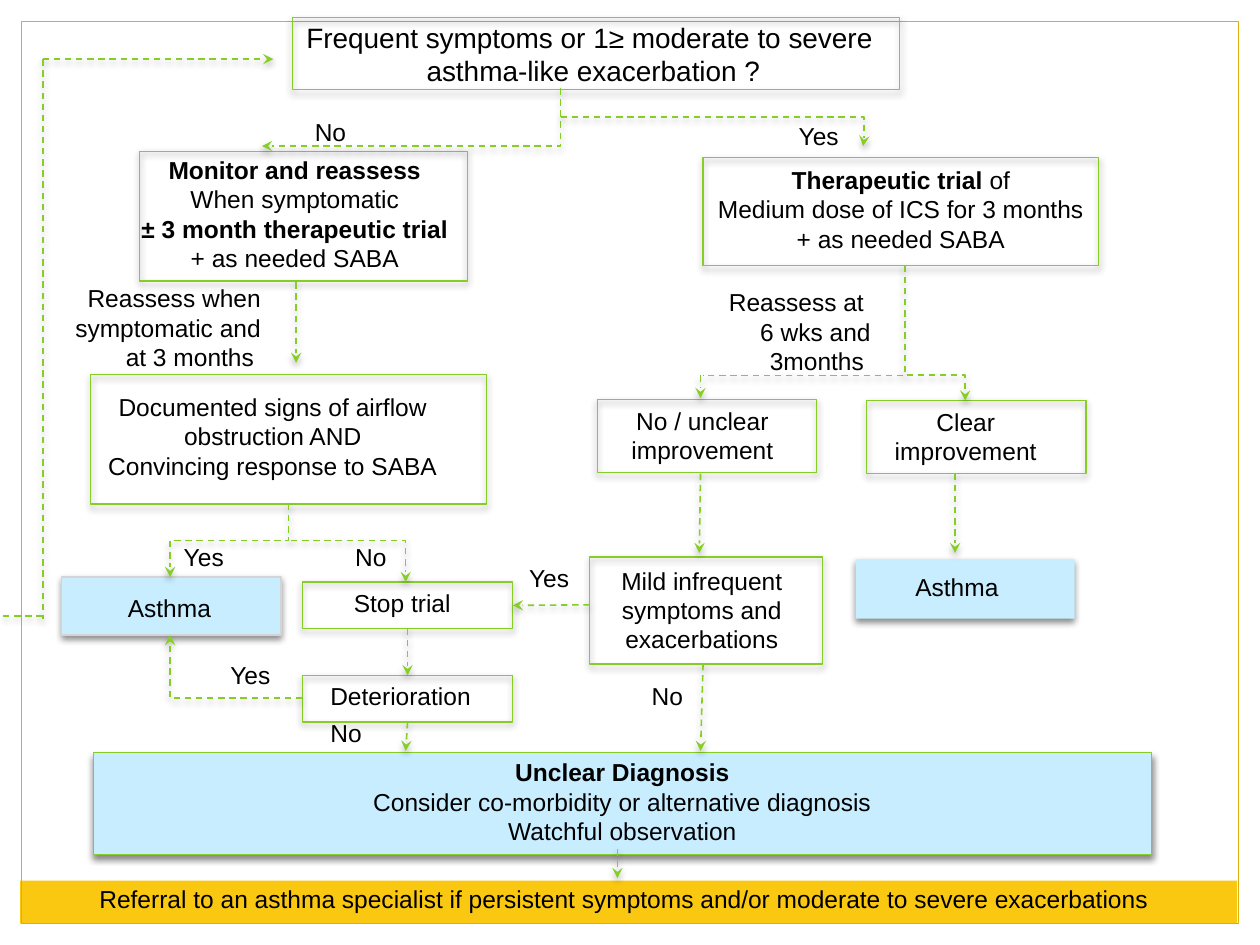
"""Build the asthma diagnosis flowchart slide."""
from lxml import etree
from pptx import Presentation
from pptx import util as u
from pptx.dml.color import RGBColor
from pptx.enum import dml, shapes, text
from pptx.oxml.ns import qn

THEME = {
    "font": "Arial", "ink": "000000", "body": 14, "title": 16,
    "green": "86CE24", "gold": "FAC810", "gold_line": "DBAF0E",
    "blue": "C7EDFF", "grey": "D4D4D4", "box_line": 0.75, "arrow_line": 0.9,
}
LEFT, CENTER, RIGHT = text.PP_ALIGN.LEFT, text.PP_ALIGN.CENTER, text.PP_ALIGN.RIGHT

QUESTION = ((2.08, 0.11, 5.26, 0.64), CENTER,
            ["Frequent symptoms or 1≥ moderate to severe ", "asthma-like exacerbation ?"])

BACKDROP = [
    ((0.16, 6.99, 9.66, 0.34), "gold", None),
    ((0.17, 0.17, 9.66, 7.16), None, "gold_line"),
]
OUTCOMES = [
    ((0.74, 5.97, 8.4, 0.81), "blue", "green"),
    ((6.79, 4.44, 1.74, 0.47), "blue", None),
    ((0.49, 4.58, 1.74, 0.46), "blue", "grey"),
]
STEPS = [
    (2.32, 0.14, 4.82, 0.57), (1.11, 1.2, 2.6, 1.03), (5.58, 1.25, 3.14, 0.86),
    (0.72, 2.97, 3.14, 1.03), (4.68, 4.42, 1.85, 0.85), (6.88, 3.18, 1.74, 0.58),
    (4.74, 3.17, 1.74, 0.58), (2.4, 4.62, 1.67, 0.37), (2.4, 5.36, 1.67, 0.37),
]

CAPTIONS = [
    ((0.62, 1.18, 3.44, 1.04), CENTER,
     ["**Monitor and reassess", "When symptomatic",
      "**± 3 month therapeutic trial", "+ as needed SABA"]),
    ((5.43, 1.26, 3.44, 0.81), CENTER,
     ["**Therapeutic trial **of", "Medium dose of ICS for 3 months", "+ as needed SABA"]),
    ((0.46, 2.2, 1.71, 0.81), RIGHT, ["Reassess when symptomatic and at 3 months "]),
    ((5.43, 2.23, 1.58, 0.81), RIGHT, ["Reassess at ", "6 wks and 3months "]),
    ((0.72, 3.06, 2.89, 0.81), CENTER,
     ["Documented signs of airflow obstruction AND", "Convincing response to SABA"]),
    ((4.74, 3.17, 1.67, 0.57), CENTER, ["No / unclear improvement"]),
    ((6.88, 3.18, 1.57, 0.57), CENTER, ["Clear improvement"]),
    ((4.53, 4.44, 2.08, 0.81), CENTER, ["Mild infrequent symptoms and exacerbations"]),
    ((6.74, 4.49, 1.71, 0.34), CENTER, ["Asthma"]),
    ((0.49, 4.66, 1.71, 0.34), CENTER, ["Asthma"]),
    ((2.71, 4.62, 1.36, 0.34), LEFT, ["Stop trial"]),
    ((2.5, 5.36, 1.36, 0.34), CENTER, ["Deterioration"]),
    ((0.74, 5.96, 8.4, 0.81), CENTER,
     ["**Unclear Diagnosis", "Consider co-morbidity or alternative diagnosis",
      "Watchful observation"]),
    ((0.69, 6.97, 8.8, 0.34), LEFT,
     ["Referral to an asthma specialist if persistent symptoms "
      "and/or moderate to severe exacerbations"]),
]
ANSWERS = [
    ("No", 2.4, 0.88, LEFT), ("Yes", 6.24, 0.91, LEFT), ("Yes", 1.36, 4.25, LEFT),
    ("No", 2.72, 4.25, LEFT), ("Yes", 4.1, 4.42, LEFT), ("No", 4.9, 5.36, RIGHT),
    ("No", 2.35, 5.65, RIGHT), ("Yes", 1.73, 5.19, LEFT),
]

STRAIGHT_ARROWS = [
    ((2.35, 2.24), (2.35, 2.88)), ((5.56, 3.76), (5.55, 4.39)),
    ((5.56, 2.98), (5.56, 3.16)), ((7.58, 3.76), (7.58, 4.39)),
    ((4.68, 4.8), (4.07, 4.8)), ((3.24, 4.99), (3.24, 5.36)),
    ((5.58, 5.27), (5.56, 5.96)), ((3.24, 5.73), (3.22, 5.96)),
    ((4.9, 6.74), (4.9, 6.97)), ((0.34, 0.47), (2.17, 0.47)),
]
PLAIN_LINES = [
    ((7.17, 2.98), (5.58, 2.98)), ((0.34, 0.47), (0.34, 4.91)), ((0.34, 4.89), (0, 4.89)),
]
SIDE_ELBOWS = [((4.45, 0.7), (2.08, 1.16), 0), ((4.45, 0.93), (6.85, 1.16), 100400)]
DOWN_ELBOWS = [((7.18, 2.11), (7.66, 3.18), 81100), ((2.29, 4), (1.35, 4.58), 50000)]
CORNERS = [((2.31, 4.29), (3.22, 4.62)), ((2.4, 5.54), (1.35, 5.04))]


def color(name):
    return RGBColor.from_string(THEME[name])


def cast_shadow(part, opacity):
    effects = part._element.spPr.find(qn("a:effectLst"))
    if effects is None:
        effects = etree.SubElement(part._element.spPr, qn("a:effectLst"))
    shadow = etree.SubElement(effects, qn("a:outerShdw"), blurRad=str(u.Pt(4)),
                              dist=str(u.Pt(2)), dir="5400000", rotWithShape="0")
    black = etree.SubElement(shadow, qn("a:srgbClr"), val="000000")
    etree.SubElement(black, qn("a:alpha"), val=str(opacity * 1000))


def add_box(slide, place, fill=None, line=None, shadow=True):
    box = slide.shapes.add_shape(shapes.MSO_SHAPE.RECTANGLE, *map(u.Inches, place))
    box.shadow.inherit = False
    if fill:
        box.fill.solid()
        box.fill.fore_color.rgb = color(fill)
    else:
        box.fill.background()
    if line:
        box.line.color.rgb = color(line)
        box.line.width = u.Pt(THEME["box_line"])
    else:
        box.line.fill.background()
    if shadow:
        cast_shadow(box, 45)
    return box


def write(frame, lines, align, size):
    """Fill a text frame; each ** in a line toggles bold."""
    frame.word_wrap = True
    frame.auto_size = text.MSO_AUTO_SIZE.NONE
    frame.vertical_anchor = text.MSO_ANCHOR.TOP
    for i, line in enumerate(lines):
        paragraph = frame.paragraphs[0] if i == 0 else frame.add_paragraph()
        paragraph.alignment = align
        font = paragraph.font
        font.name, font.size = THEME["font"], u.Pt(THEME[size])
        font.color.rgb = color("ink")
        pieces = [(piece, n % 2 == 1) for n, piece in enumerate(line.split("**")) if piece]
        uniform = len(pieces) == 1
        if uniform:
            font.bold = pieces[0][1]
        for piece, bold in pieces:
            run = paragraph.add_run()
            run.text = piece
            if not uniform:
                run.font.bold = bold


def add_caption(slide, place, align, lines):
    caption = slide.shapes.add_textbox(*map(u.Inches, place))
    write(caption.text_frame, lines, align, "body")


def add_link(slide, start, end, kind=shapes.MSO_CONNECTOR.STRAIGHT, arrow=True):
    link = slide.shapes.add_connector(kind, *map(u.Inches, (*start, *end)))
    link.line.color.rgb = color("green")
    link.line.width = u.Pt(THEME["arrow_line"])
    link.line.dash_style = dml.MSO_LINE.DASH
    if arrow:
        etree.SubElement(link.line._get_or_add_ln(), qn("a:tailEnd"), type="stealth")
    cast_shadow(link, 35)
    return link


def add_elbow(slide, start, end, bend):
    elbow = add_link(slide, start, end, shapes.MSO_CONNECTOR.ELBOW)
    guides = elbow._element.spPr.find(qn("a:prstGeom")).get_or_add_avLst()
    etree.SubElement(guides, qn("a:gd"), name="adj1", fmla=f"val {bend}")
    return elbow


def add_down_elbow(slide, start, end, bend):
    (x1, y1), (x2, y2) = start, end
    mid_x, mid_y = (x1 + x2) / 2, (y1 + y2) / 2
    side = 1 if x2 > x1 else -1
    reach, drop = abs(x2 - x1) / 2, side * (y2 - y1) / 2
    elbow = add_elbow(slide, (mid_x + drop, mid_y - reach), (mid_x - drop, mid_y + reach), bend)
    elbow._element.spPr.find(qn("a:xfrm")).set("rot", str((180 + 90 * side) * 60000))


def find_site(point, boxes):
    for (x, y, w, h), box in boxes:
        sites = [(x + w / 2, y), (x, y + h / 2), (x + w / 2, y + h), (x + w, y + h / 2)]
        for side, site in enumerate(sites):
            if max(abs(a - b) for a, b in zip(point, site)) < 0.02:
                return box, side
    return None


def main():
    deck = Presentation()
    deck.slide_width, deck.slide_height = u.Inches(10), u.Inches(7.5)
    slide = deck.slides.add_slide(deck.slide_layouts[5])
    place, align, lines = QUESTION
    title = slide.shapes.title
    title.left, title.top, title.width, title.height = map(u.Inches, place)
    write(title.text_frame, lines, align, "title")

    for place, fill, line in BACKDROP:
        add_box(slide, place, fill, line, shadow=False)
    for place, fill, line in OUTCOMES:
        add_box(slide, place, fill, line)
    steps = [(place, add_box(slide, place, line="green")) for place in STEPS]
    for caption in CAPTIONS:
        add_caption(slide, *caption)
    for answer, left, top, align in ANSWERS:
        add_caption(slide, (left, top, 0.62, 0.34), align, [answer])

    for start, end in STRAIGHT_ARROWS:
        arrow = add_link(slide, start, end)
        for point, connect in ((start, arrow.begin_connect), (end, arrow.end_connect)):
            site = find_site(point, steps)
            if site:
                connect(*site)
    for start, end in PLAIN_LINES:
        add_link(slide, start, end, arrow=False)
    for elbow in SIDE_ELBOWS:
        add_elbow(slide, *elbow)
    for elbow in DOWN_ELBOWS:
        add_down_elbow(slide, *elbow)
    for start, end in CORNERS:
        corner = add_link(slide, start, end, shapes.MSO_CONNECTOR.ELBOW)
        corner._element.spPr.find(qn("a:prstGeom")).set("prst", "bentConnector2")
    deck.save("out.pptx")


if __name__ == "__main__":
    main()
